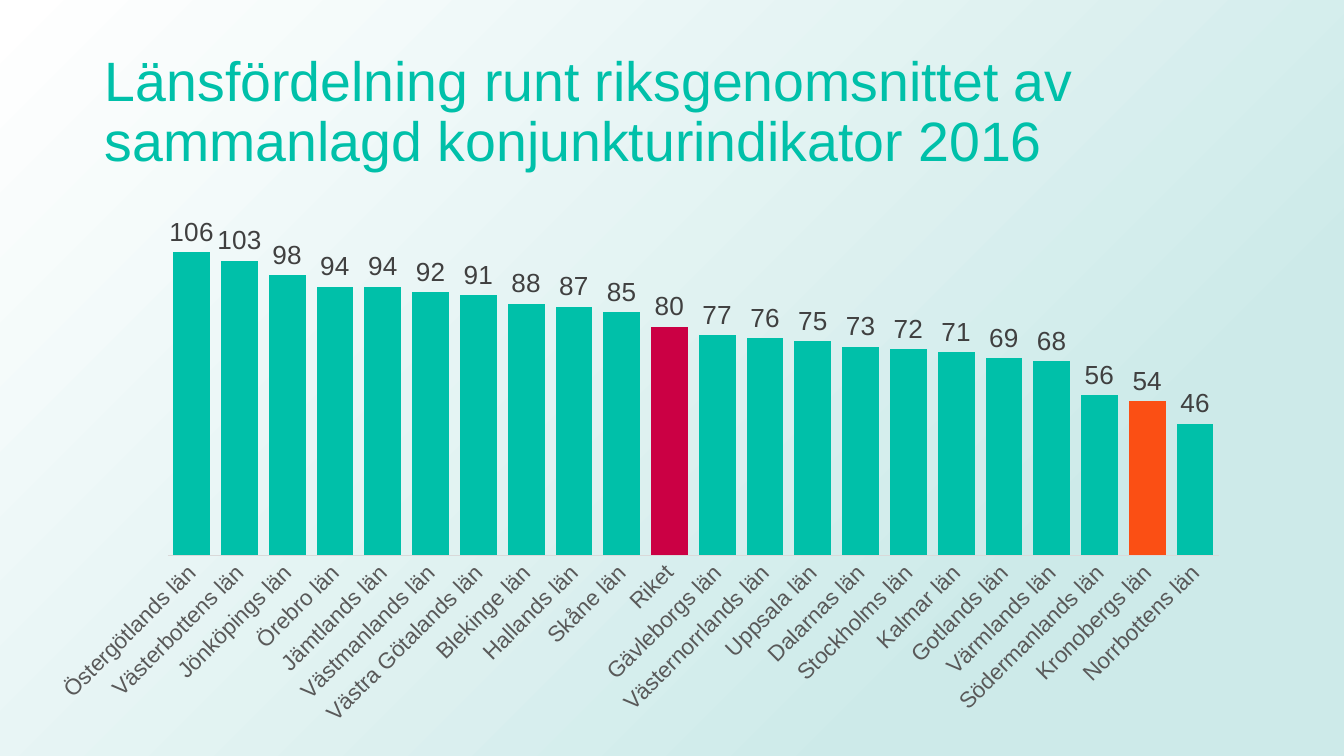
from lxml.etree import SubElement
from pptx import Presentation
from pptx.chart.data import CategoryChartData
from pptx.dml.color import RGBColor
from pptx.enum.chart import XL_CHART_TYPE, XL_LABEL_POSITION, XL_TICK_MARK
from pptx.enum.shapes import MSO_SHAPE
from pptx.enum.text import MSO_ANCHOR
from pptx.oxml import parse_xml
from pptx.oxml.ns import nsdecls, qn
from pptx.util import Inches, Pt

WIDTH, HEIGHT = Inches(10), Inches(10 * 9 / 16)
TEAL, CRIMSON, ORANGE = "00C0A9", "CB0044", "FB4F14"
INDICATORS = [
    ("Östergötlands län", 106), ("Västerbottens län", 103),
    ("Jönköpings län", 98), ("Örebro län", 94), ("Jämtlands län", 94),
    ("Västmanlands län", 92), ("Västra Götalands län", 91),
    ("Blekinge län", 88), ("Hallands län", 87), ("Skåne län", 85),
    ("Riket", 80), ("Gävleborgs län", 77), ("Västernorrlands län", 76),
    ("Uppsala län", 75), ("Dalarnas län", 73), ("Stockholms län", 72),
    ("Kalmar län", 71), ("Gotlands län", 69), ("Värmlands län", 68),
    ("Södermanlands län", 56), ("Kronobergs län", 54),
    ("Norrbottens län", 46),
]
HIGHLIGHTS = {"Riket": CRIMSON, "Kronobergs län": ORANGE}


def set_color(color_format, color):
    """Apply a hex colour to a colour format."""
    color_format.rgb = RGBColor.from_string(color)


def set_fill(fill, color):
    """Make a fill solid in a hex colour."""
    fill.solid()
    set_color(fill.fore_color, color)


def set_font(font, size, color):
    """Set Arial in a size and hex colour."""
    font.name = "Arial"
    font.size = Pt(size)
    set_color(font.color, color)


def add_backdrop(slide):
    """Cover the slide with a gradient radiating from the lower right."""
    backdrop = slide.shapes.add_shape(MSO_SHAPE.RECTANGLE, 0, 0, WIDTH, HEIGHT)
    backdrop.shadow.inherit = False
    backdrop.line.fill.background()
    backdrop.fill.gradient()
    stops = backdrop.fill.gradient_stops
    for stop, position, color in zip(stops, (0.23, 1), ("CDEAE9", "FFFFFF")):
        stop.position = position
        set_color(stop.color, color)
    gradient = backdrop.element.spPr.find(qn("a:gradFill"))
    gradient.replace(gradient.find(qn("a:lin")), parse_xml(
        f'<a:path {nsdecls("a")} path="circle">'
        '<a:fillToRect l="100000" t="100000"/></a:path>'))


def add_title(slide, wording):
    """Add the slide heading."""
    heading = slide.shapes.add_textbox(
        Inches(0.69), Inches(0.3), Inches(8.62), Inches(1.09))
    frame = heading.text_frame
    frame.word_wrap = True
    frame.vertical_anchor = MSO_ANCHOR.MIDDLE
    frame.margin_left = frame.margin_right = Inches(0.09)
    paragraph = frame.paragraphs[0]
    paragraph.line_spacing = 0.9
    run = paragraph.add_run()
    run.text = wording
    set_font(run.font, 29.7, TEAL)


def place_plot(chart, **fractions):
    """Fix the inner plot area as fractions of the chart."""
    plot_area = chart.element.find(".//" + qn("c:plotArea"))
    for automatic in plot_area.findall(qn("c:layout")):
        plot_area.remove(automatic)
    layout = parse_xml(f'<c:layout {nsdecls("c")}/>')
    plot_area.insert(0, layout)
    manual = SubElement(layout, qn("c:manualLayout"))
    settings = {"layoutTarget": "inner", "xMode": "edge", "yMode": "edge"}
    for tag, value in {**settings, **fractions}.items():
        SubElement(manual, qn(f"c:{tag}")).set("val", str(value))


def style_axes(chart):
    """Show slanted county names and hide the value axis."""
    counties = chart.category_axis
    counties.major_tick_mark = XL_TICK_MARK.NONE
    counties.format.line.width = Pt(0.75)
    set_color(counties.format.line.color, "D9D9D9")
    set_font(counties.tick_labels.font, 12, "595959")
    body = counties._element.find(qn("c:txPr")).find(qn("a:bodyPr"))
    body.set("rot", "-2700000")
    body.set("vert", "horz")
    values = chart.value_axis
    values.minimum_scale, values.maximum_scale = 0, 120
    values.has_major_gridlines = False
    values.visible = False


def add_indicator_chart(slide):
    """Add the ranked column chart with highlighted columns."""
    data = CategoryChartData(number_format="0")
    data.categories = [county for county, _ in INDICATORS]
    data.add_series("Series 1", [value for _, value in INDICATORS])
    chart = slide.shapes.add_chart(
        XL_CHART_TYPE.COLUMN_CLUSTERED, Inches(0.26), Inches(1.5),
        Inches(8.99), Inches(3.97), data).chart
    chart.has_legend = chart.has_title = False
    chart.font.name, chart.font.size = "Calibri", Pt(10)
    set_color(chart.font.color, "000000")
    place_plot(chart, x=0.11, y=0.02, w=0.87, h=0.643)
    style_axes(chart)

    plot = chart.plots[0]
    plot.gap_width = 30
    plot.vary_by_categories = False
    columns = plot.series[0]
    set_fill(columns.format.fill, TEAL)
    for index, (county, _) in enumerate(INDICATORS):
        if county in HIGHLIGHTS:
            set_fill(columns.points[index].format.fill, HIGHLIGHTS[county])
    labels = columns.data_labels
    labels.show_value = True
    labels.position = XL_LABEL_POSITION.OUTSIDE_END
    labels.number_format, labels.number_format_is_linked = "0", False
    set_font(labels.font, 14, "404040")


def main():
    """Build and save the slide."""
    presentation = Presentation()
    presentation.slide_width, presentation.slide_height = WIDTH, HEIGHT
    slide = presentation.slides.add_slide(presentation.slide_layouts[6])
    add_backdrop(slide)
    add_title(slide, "Länsfördelning runt riksgenomsnittet av "
                     "sammanlagd konjunkturindikator 2016")
    add_indicator_chart(slide)
    presentation.save("out.pptx")


if __name__ == "__main__":
    main()
